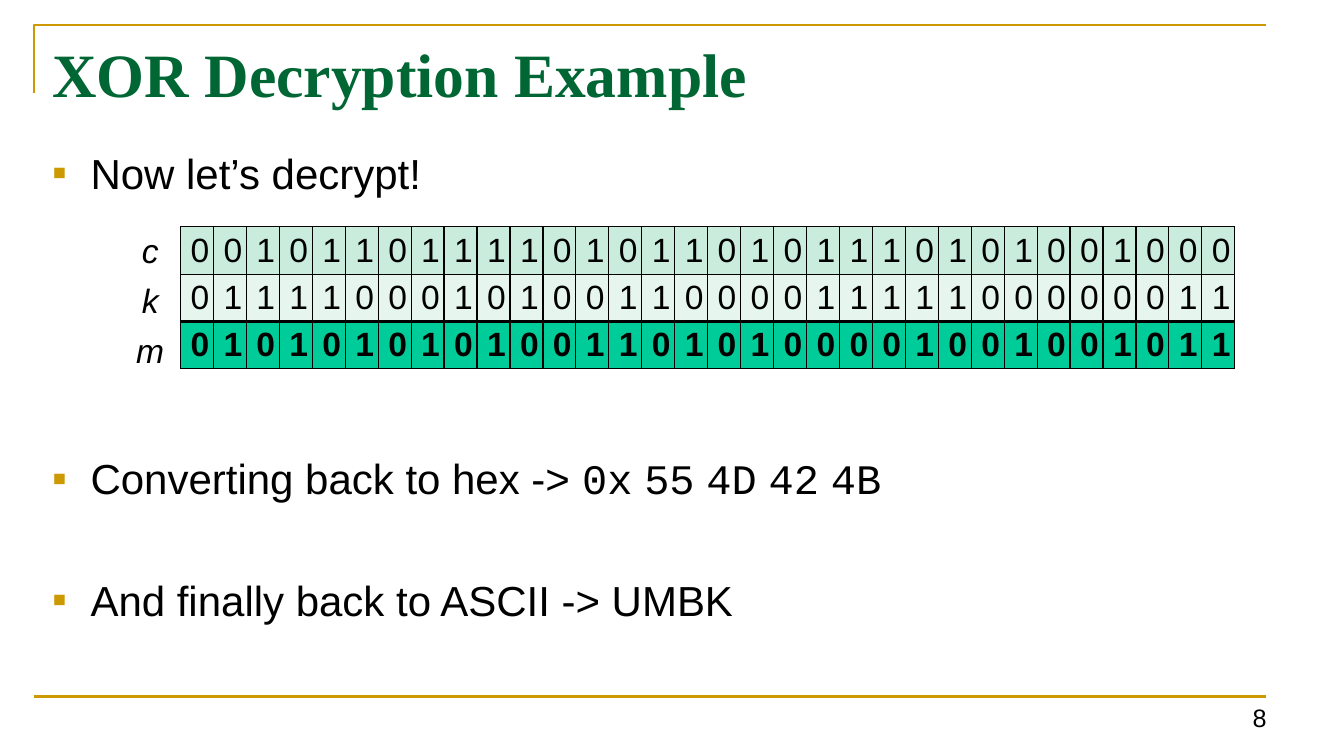
from dataclasses import dataclass

import lxml.etree
import pptx
import pptx.dml.color
import pptx.enum.shapes
import pptx.enum.text
import pptx.oxml.ns
import pptx.shapes.autoshape
import pptx.slide
import pptx.table
import pptx.text.text
import pptx.util

Inches = pptx.util.Inches
Pt = pptx.util.Pt
Align = pptx.enum.text.PP_ALIGN
Anchor = pptx.enum.text.MSO_ANCHOR
qn = pptx.oxml.ns.qn


@dataclass(frozen=True)
class Theme:
    black: str = "000000"
    gold: str = "CC9900"
    title_green: str = "006633"
    cipher_fill: str = "CAECDD"
    key_fill: str = "E6F6EF"
    message_fill: str = "00CC99"
    sans: str = "Arial"
    serif: str = "Times New Roman"
    mono: str = "Courier New"
    title_size: float = 44
    body_size: float = 30
    table_size: float = 24
    number_size: float = 18
    gap_size: float = 14
    rule_width: float = 1.5
    thin_border: float = 1
    sum_border: float = 3


THEME = Theme()


@dataclass(frozen=True)
class Run:
    text: str
    size: float = THEME.body_size
    font: str = THEME.sans
    color: str = THEME.black
    bold: bool = False
    italic: bool = False


@dataclass(frozen=True)
class Paragraph:
    runs: tuple[Run, ...]
    space_before: float = 0
    align: Align = Align.LEFT
    bullet: str = ""


@dataclass(frozen=True)
class TextBox:
    left: float
    top: float
    width: float
    height: float
    paragraphs: tuple[Paragraph, ...]
    anchor: Anchor = Anchor.TOP
    top_inset: float = 0.05


@dataclass(frozen=True)
class BitRow:
    bits: str
    fill: str
    top_border: float = THEME.thin_border
    bottom_border: float = THEME.thin_border
    bold: bool = False


PLAINTEXT = "UMBK"
KEY = "01111000101001100001111100000011"
BIT_COUNT = len(KEY)
MESSAGE = "".join(f"{ord(letter):08b}" for letter in PLAINTEXT)
CIPHER = f"{int(MESSAGE, 2) ^ int(KEY, 2):0{BIT_COUNT}b}"

BIT_ROWS = (
    BitRow(CIPHER, THEME.cipher_fill),
    BitRow(KEY, THEME.key_fill, bottom_border=THEME.sum_border),
    BitRow(MESSAGE, THEME.message_fill, top_border=THEME.sum_border, bold=True),
)

HEX_RUNS = [Run("0x", font=THEME.mono)]
for plain_letter in PLAINTEXT:
    HEX_RUNS += [Run(" ", THEME.gap_size, THEME.mono),
                 Run(f"{ord(plain_letter):02X}", font=THEME.mono)]

TITLE = TextBox(0.42, 0.3, 12.24, 1.5, (
    Paragraph((Run("XOR Decryption Example", THEME.title_size, THEME.serif,
                   THEME.title_green, bold=True),)),
), top_inset=0.06)
BODY = TextBox(0.42, 1.42, 12.24, 5.28, (
    Paragraph((Run("Now let’s decrypt!"),), bullet="▪"),
    Paragraph((Run("Converting back to hex -> "), *HEX_RUNS), 182, bullet="▪"),
    Paragraph((Run(f"And finally back to ASCII -> {PLAINTEXT}"),), 51, bullet="▪"),
), top_inset=0.04)
ROW_LABELS = TextBox(1.24, 2.23, 0.5, 1.5, tuple(
    Paragraph((Run(letter, THEME.table_size, italic=True),), space, Align.CENTER)
    for letter, space in (("c", 0), ("k", 7), ("m", 7))
))
SLIDE_NUMBER = TextBox(11.22, 6.83, 1.44, 0.49, (
    Paragraph((Run("8", THEME.number_size),), align=Align.RIGHT),
), Anchor.BOTTOM)


def rgb(color: str) -> pptx.dml.color.RGBColor:
    return pptx.dml.color.RGBColor.from_string(color)


def add_run(paragraph: pptx.text.text._Paragraph, content: Run) -> None:
    run = paragraph.add_run()
    run.text = content.text
    run.font.size = Pt(content.size)
    run.font.name = content.font
    run.font.bold = content.bold
    run.font.italic = content.italic
    run.font.color.rgb = rgb(content.color)


def add_bullet(paragraph: pptx.text.text._Paragraph, symbol: str) -> None:
    """Give the paragraph a gold bullet with a hanging indent."""
    properties = paragraph._p.get_or_add_pPr()
    properties.set("marL", str(Inches(0.38)))
    properties.set("indent", str(-Inches(0.38)))
    color = lxml.etree.SubElement(properties, qn("a:buClr"))
    lxml.etree.SubElement(color, qn("a:srgbClr"), val=THEME.gold)
    lxml.etree.SubElement(properties, qn("a:buFont"), typeface=THEME.sans)
    lxml.etree.SubElement(properties, qn("a:buChar"), char=symbol)


def add_text(slide: pptx.slide.Slide, box: TextBox) -> None:
    shape = slide.shapes.add_textbox(
        Inches(box.left), Inches(box.top), Inches(box.width), Inches(box.height))
    frame = shape.text_frame
    frame.word_wrap = True
    frame.vertical_anchor = box.anchor
    frame.margin_top = Inches(box.top_inset)
    for index, content in enumerate(box.paragraphs):
        paragraph = frame.add_paragraph() if index else frame.paragraphs[0]
        paragraph.alignment = content.align
        paragraph.space_before = Pt(content.space_before)
        if content.bullet:
            add_bullet(paragraph, content.bullet)
        for run in content.runs:
            add_run(paragraph, run)


def add_frame_lines(slide: pptx.slide.Slide) -> None:
    """Draw the corner rule above the title and the rule above the footer."""
    left, right, top, bottom = Inches(0.34), Inches(12.56), Inches(0.25), Inches(6.91)
    builder = slide.shapes.build_freeform(left, Inches(0.92))
    builder.add_line_segments([(left, top), (right, top)], close=False)
    corner = builder.convert_to_shape()
    corner.fill.background()
    corner.shadow.inherit = False
    footer = slide.shapes.add_connector(
        pptx.enum.shapes.MSO_CONNECTOR.STRAIGHT, left, bottom, right, bottom)
    for rule in (corner, footer):
        rule.line.color.rgb = rgb(THEME.gold)
        rule.line.width = Pt(THEME.rule_width)
    lxml.etree.SubElement(footer._element.spPr, qn("a:effectLst"))


def add_borders(cell: pptx.table._Cell, row: BitRow) -> None:
    properties = cell._tc.get_or_add_tcPr()
    widths = {"a:lnL": THEME.thin_border, "a:lnR": THEME.thin_border,
              "a:lnT": row.top_border, "a:lnB": row.bottom_border}
    for tag, width in widths.items():
        line = lxml.etree.SubElement(properties, qn(tag), w=str(Pt(width)))
        fill = lxml.etree.SubElement(line, qn("a:solidFill"))
        lxml.etree.SubElement(fill, qn("a:srgbClr"), val=THEME.black)


def add_bit_table(slide: pptx.slide.Slide) -> None:
    row_height = 0.47
    table = slide.shapes.add_table(
        len(BIT_ROWS), BIT_COUNT, Inches(1.79), Inches(2.25),
        Inches(10.46), Inches(row_height * len(BIT_ROWS))).table
    table.first_row = False
    table.horz_banding = False
    for row_index, row in enumerate(BIT_ROWS):
        table.rows[row_index].height = Inches(row_height)
        for column_index, bit in enumerate(row.bits):
            cell = table.cell(row_index, column_index)
            add_borders(cell, row)
            cell.margin_bottom = Inches(0.01)
            cell.fill.solid()
            cell.fill.fore_color.rgb = rgb(row.fill)
            add_run(cell.text_frame.paragraphs[0],
                    Run(bit, THEME.table_size, bold=row.bold))


def main() -> None:
    presentation = pptx.Presentation()
    presentation.slide_width = Inches(13.33)
    presentation.slide_height = Inches(7.5)
    slide = presentation.slides.add_slide(presentation.slide_layouts[6])
    add_frame_lines(slide)
    for box in (SLIDE_NUMBER, TITLE, BODY):
        add_text(slide, box)
    add_bit_table(slide)
    add_text(slide, ROW_LABELS)
    presentation.save("out.pptx")


if __name__ == "__main__":
    main()
